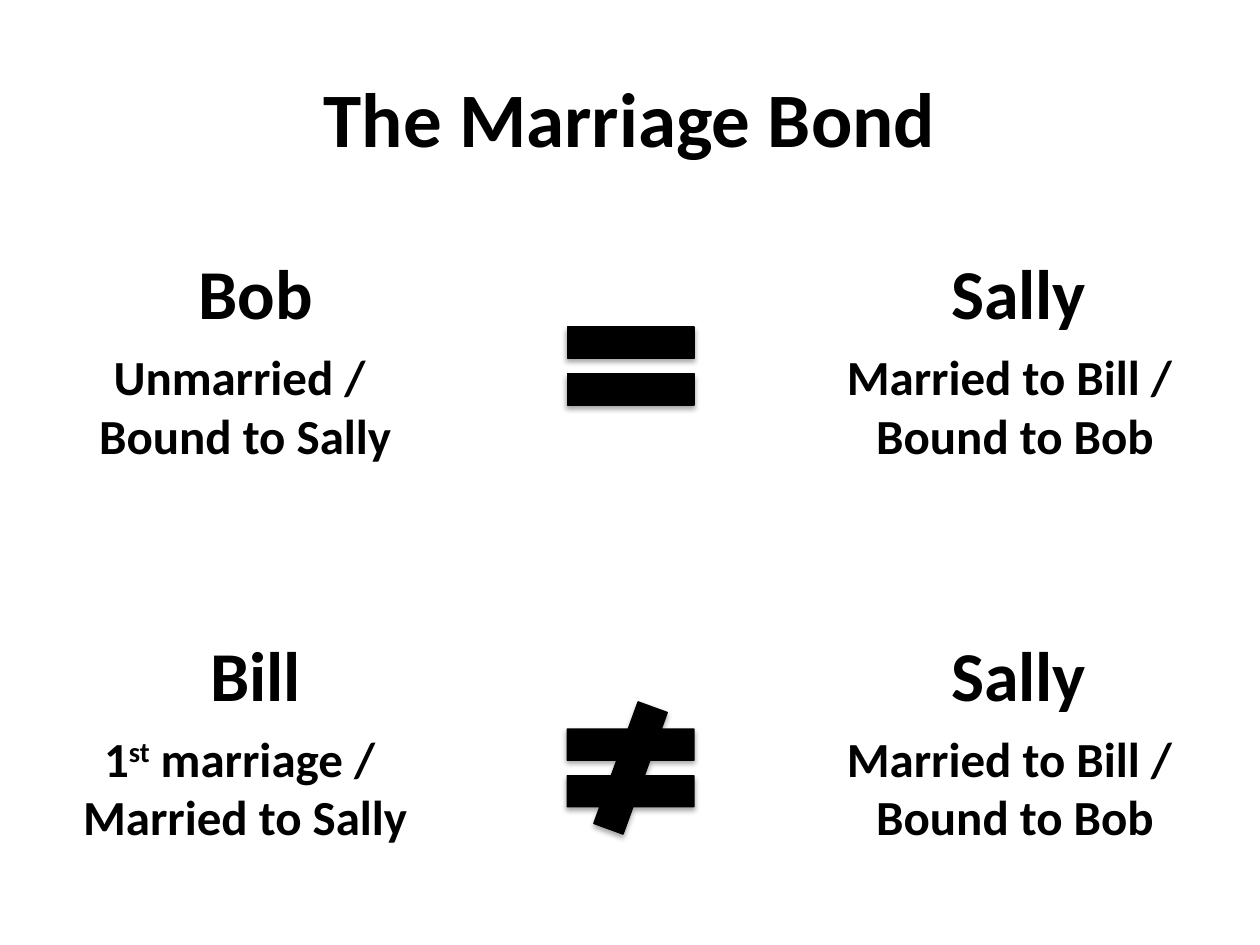
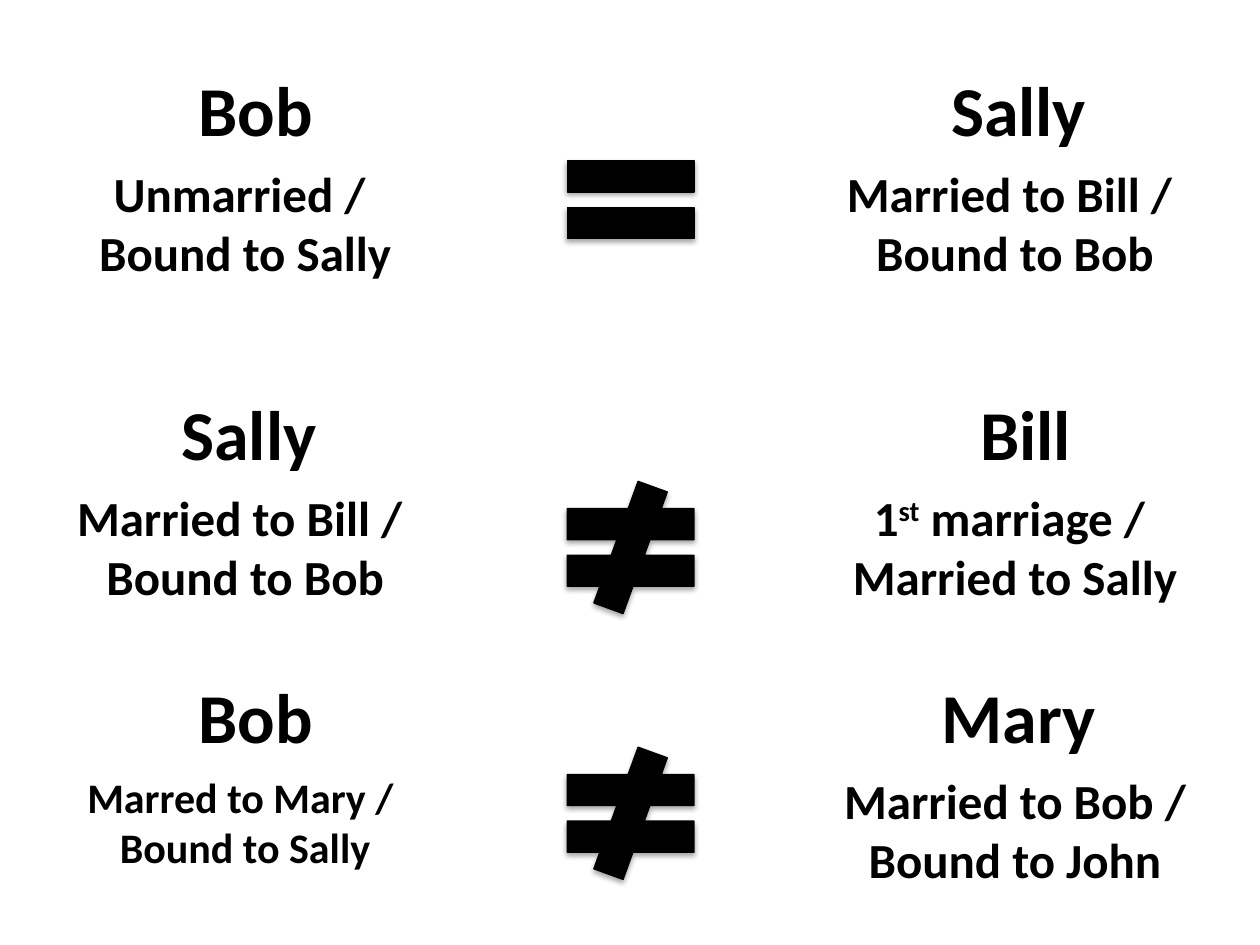
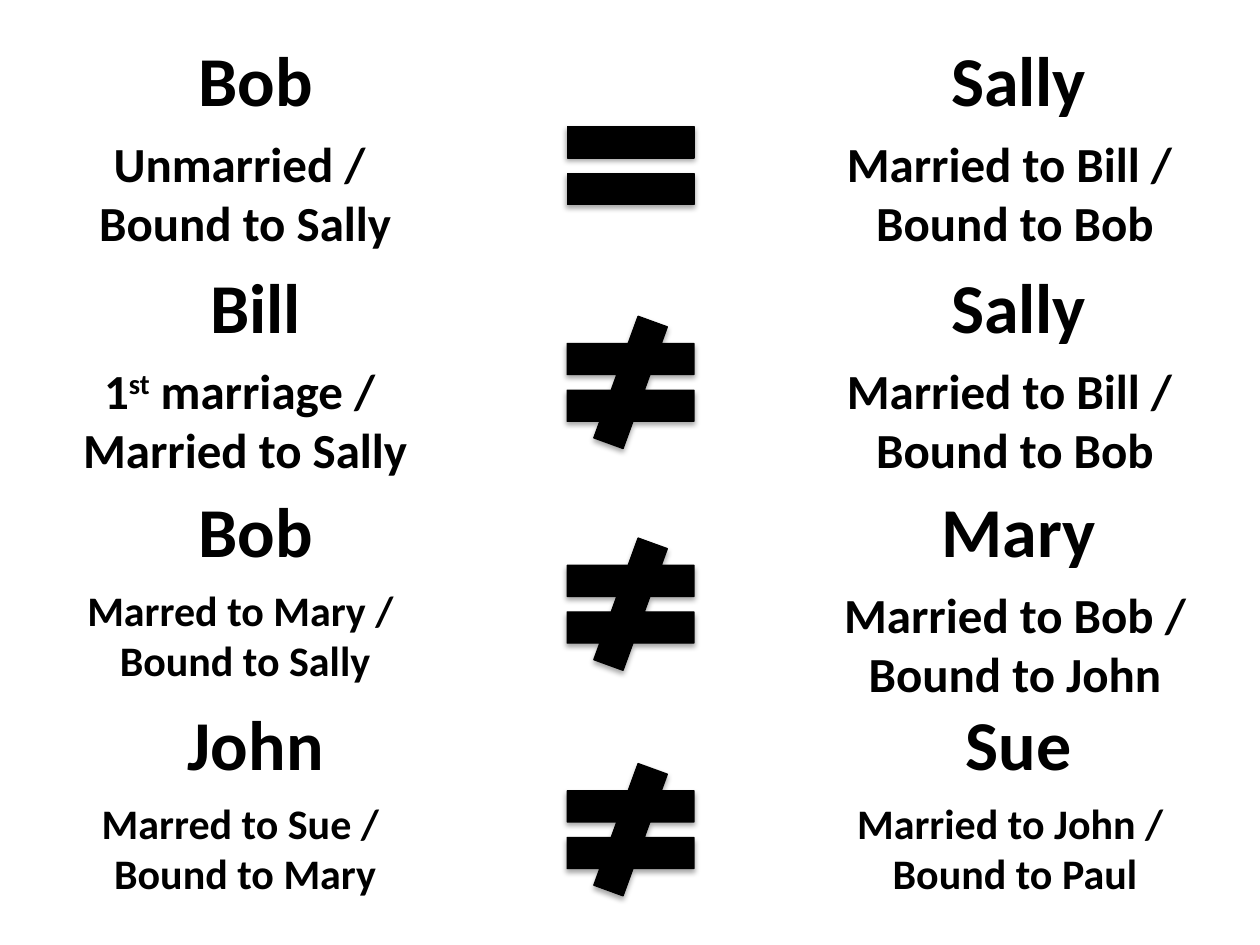
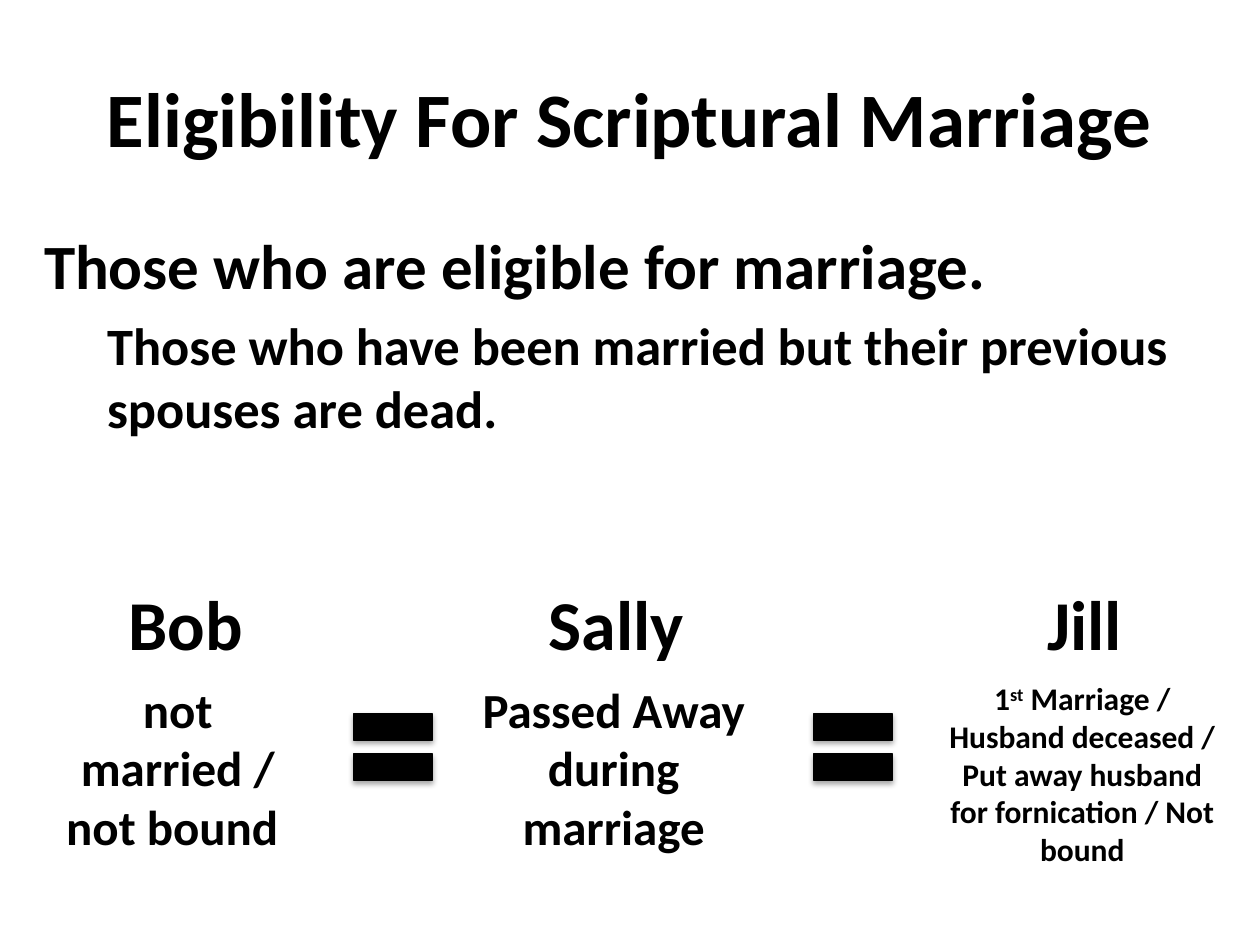
import pptx
import pptx.util
import pptx.dml.color
import pptx.enum.shapes
import pptx.enum.text
import lxml.etree

Inches = pptx.util.Inches
Pt = pptx.util.Pt
EQUAL = pptx.enum.shapes.MSO_SHAPE.MATH_EQUAL
NOT_EQUAL = pptx.enum.shapes.MSO_SHAPE.MATH_NOT_EQUAL
CENTER = pptx.enum.text.PP_ALIGN.CENTER
FONT = "Calibri"
INK = "000000"
NAME_SIZE = 40
NAME_HEIGHT = 0.77


def color(code):
    return pptx.dml.color.RGBColor.from_string(code)


def add_label(page, left, top, width, height, text, size):
    box = page.shapes.add_textbox(Inches(left), Inches(top), Inches(width), Inches(height))
    frame = box.text_frame
    frame.word_wrap = True
    frame.auto_size = pptx.enum.text.MSO_AUTO_SIZE.SHAPE_TO_FIT_TEXT
    for number, line in enumerate(text.split("\n")):
        para = frame.add_paragraph() if number else frame.paragraphs[0]
        para.alignment = CENTER
        for position, part in enumerate(line.split("^")):
            span = para.add_run()
            span.text = part
            span.font.name = FONT
            span.font.size = Pt(size)
            span.font.bold = True
            span.font.color.rgb = color(INK)
            if position % 2:
                span.font._element.set("baseline", "30000")


deck = pptx.Presentation()
deck.slide_width = Inches(10)
deck.slide_height = Inches(7.5)
bond, remarriage, chain, eligibility = [
    deck.slides.add_slide(deck.slide_layouts[number]) for number in (5, 6, 6, 1)
]

for page, heading in (
    (bond, "The Marriage Bond"),
    (eligibility, "Eligibility For Scriptural Marriage"),
):
    title = page.shapes.title
    title.left, title.top = Inches(0.5), Inches(0.3)
    title.width, title.height = Inches(9), Inches(1.25)
    title.text_frame.text = heading
    para = title.text_frame.paragraphs[0]
    para.alignment = CENTER
    font = para.runs[0].font
    font.name = FONT
    font.size = Pt(44)
    font.bold = True
    font.color.rgb = color(INK)

BOB = ("Bob", "Unmarried / \nBound to Sally", 28)
SALLY = ("Sally", "Married to Bill / \nBound to Bob", 28)
BILL = ("Bill", "1^st^ marriage / \nMarried to Sally", 28)
BOB_AGAIN = ("Bob", "Marred to Mary / \nBound to Sally", 24)
MARY = ("Mary", "Married to Bob / \nBound to John", 28)
JOHN = ("John", "Marred to Sue / \nBound to Mary", 24)
SUE = ("Sue", "Married to John / \nBound to Paul", 24)

STRAIGHT = ((1.18, 1.7), (6.85, 2.47))
SWAPPED = ((0.74, 2.47), (7.29, 1.7))
STATUS_LEFTS = (0.49, 6.6)
STATUS_HEIGHTS = {28: 1.04, 24: 0.91}

couples = (
    (bond, 1.93, EQUAL, 2.38, STRAIGHT, (BOB, SALLY)),
    (bond, 4.96, NOT_EQUAL, 5.57, STRAIGHT, (BILL, SALLY)),
    (remarriage, 0.48, EQUAL, 1.06, STRAIGHT, (BOB, SALLY)),
    (remarriage, 3.05, NOT_EQUAL, 3.82, SWAPPED, (SALLY, BILL)),
    (remarriage, 5.3, NOT_EQUAL, 5.93, STRAIGHT, (BOB_AGAIN, MARY)),
    (chain, 0.24, EQUAL, 0.79, STRAIGHT, (BOB, SALLY)),
    (chain, 2.04, NOT_EQUAL, 2.51, STRAIGHT, (BILL, SALLY)),
    (chain, 3.82, NOT_EQUAL, 4.27, STRAIGHT, (BOB_AGAIN, MARY)),
    (chain, 5.51, NOT_EQUAL, 6.06, STRAIGHT, (JOHN, SUE)),
)
signs = [(eligibility, EQUAL, left, 5.48, 0.84, 0.9) for left in (2.7, 6.35)]

for page, top, sign, sign_top, columns, people in couples:
    for column, status_left, person in zip(columns, STATUS_LEFTS, people):
        name, status, size = person
        name_left, name_width = column
        add_label(page, name_left, top, name_width, NAME_HEIGHT, name, NAME_SIZE)
        add_label(page, status_left, top + NAME_HEIGHT, 2.91, STATUS_HEIGHTS[size], status, size)
    signs.append((page, sign, 4.32, sign_top, 1.37, 1.05))

body = eligibility.placeholders[1]
body.left, body.top = Inches(0.25), Inches(1.75)
body.width, body.height = Inches(9.5), Inches(5.75)
points = (
    ("Those who are eligible for marriage.", 36, 0),
    ("Those who have been married but their previous spouses are dead.", 30, 1),
)
body.text_frame.text = "\n".join(point[0] for point in points)
for para, (text, size, level) in zip(body.text_frame.paragraphs, points):
    para.level = level
    if level == 0:
        para.space_before = Pt(0)
    properties = para._p.get_or_add_pPr()
    properties.set("marL", str(Inches(0.5 * level)))
    properties.set("indent", "0")
    lxml.etree.SubElement(properties, pptx.oxml.ns.qn("a:buNone"))
    font = para.runs[0].font
    font.name = FONT
    font.size = Pt(size)
    font.bold = True
    font.color.rgb = color(INK)

for name, name_left, name_width, status_left, height, status, size in (
    ("Bob", 0.8, 1.35, 0.25, 1.51, "not married / not bound ", 28),
    ("Sally", 3.91, 1.96, 3.71, 1.51, "Passed Away during marriage", 28),
    ("Jill", 7.63, 1.96, 7.43, 1.92,
     "1^st^ Marriage / Husband deceased /\nPut away husband for fornication / Not bound", 18),
):
    add_label(eligibility, name_left, 4.56, name_width, NAME_HEIGHT, name, NAME_SIZE)
    add_label(eligibility, status_left, 5.34, 2.32, height, status, size)

for page, sign, left, top, width, height in signs:
    symbol = page.shapes.add_shape(sign, Inches(left), Inches(top), Inches(width), Inches(height))
    symbol.fill.solid()
    symbol.fill.fore_color.rgb = color(INK)
    symbol.line.color.rgb = color(INK)
    symbol.line.width = Pt(0.75)

deck.save("out.pptx")
